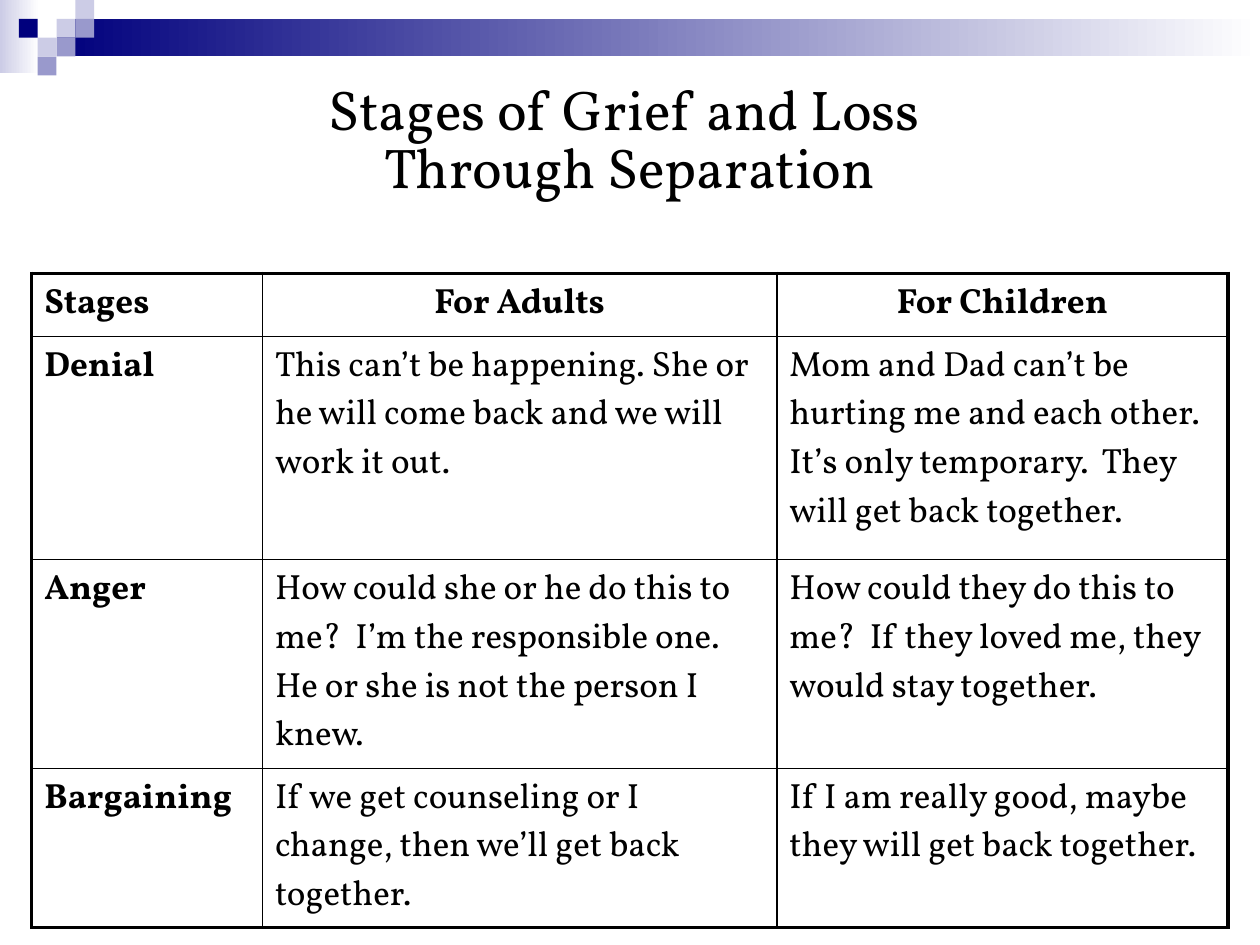
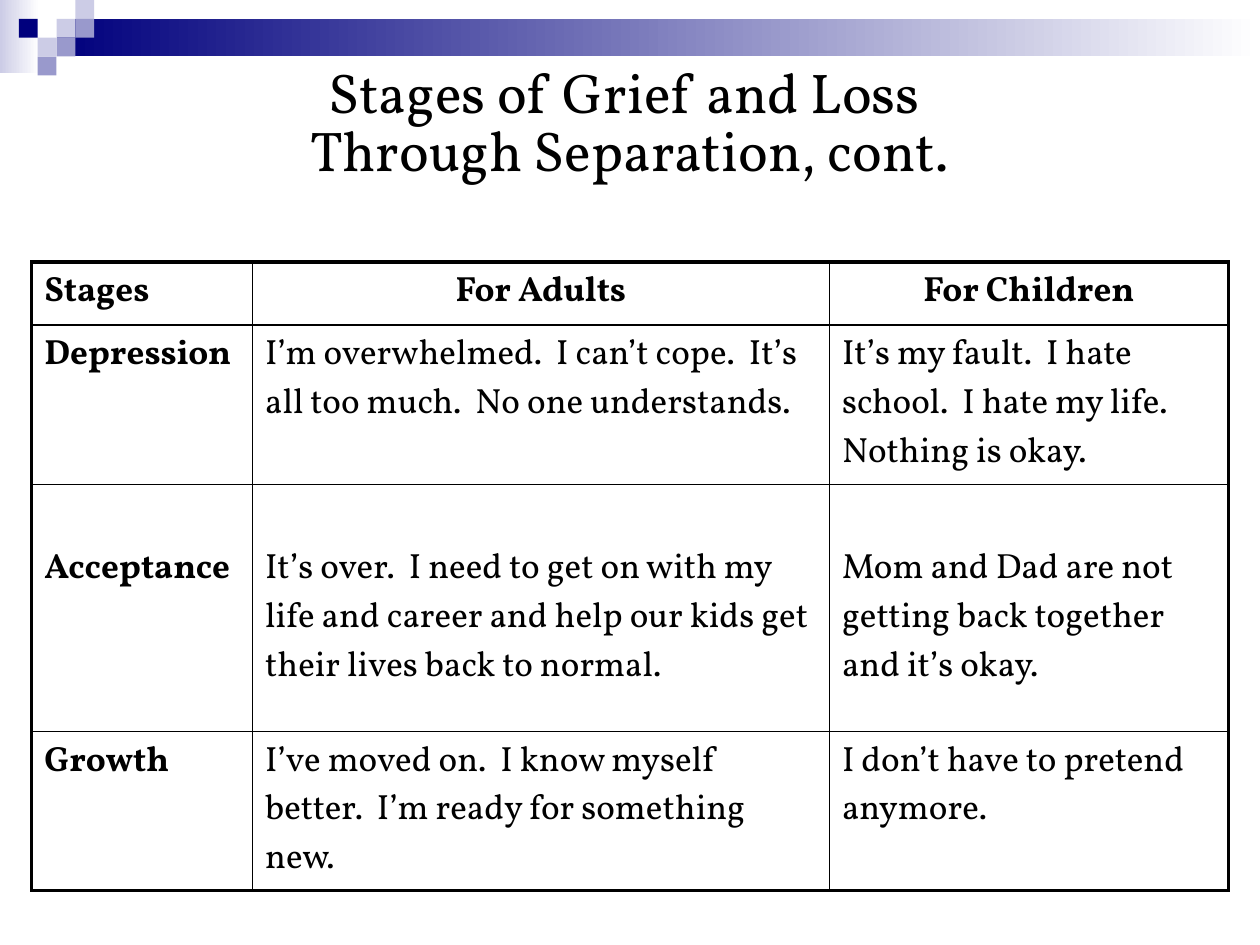
from lxml import etree
from pptx import Presentation
from pptx.dml.color import RGBColor as RGB
from pptx.enum.shapes import MSO_SHAPE as SHAPE
from pptx.enum.text import MSO_ANCHOR as ANCHOR, MSO_AUTO_SIZE as AUTOSIZE, PP_ALIGN as ALIGN
from pptx.oxml.ns import qn
from pptx.util import Cm, Pt

COLORS = {"text": "000000", "navy": "00007D", "mid": "9999CC",
          "pale": "CCCCE6", "white": "FFFFFF"}
FONT = "Vollkorn"
SQUARE = 0.38  # side of the corner squares, in cm
SQUARES = [(3, 1, "pale"), (4, 0, "pale"), (4, 1, "mid"), (2, 2, "pale"),
           (1, 1, "navy"), (3, 2, "mid"), (2, 3, "mid")]  # column, row, colour
HEADER = ["Stages", "For Adults", "For Children"]
THIN, THICK = Pt(1), Pt(2.25)


def color(name):
    return RGB.from_string(COLORS[name])


def write(tf, text, size=20, bold=False, align=ALIGN.LEFT, spacing=None):
    """Fill a text frame with one formatted paragraph; a newline breaks the line."""
    p = tf.paragraphs[0]
    p.alignment, p.line_spacing = align, spacing
    for i, line in enumerate(text.split("\n")):
        if i:
            p.add_line_break()
        r = p.add_run()
        r.text = line
        r.font.name, r.font.size, r.font.bold = FONT, Pt(size), bold
        r.font.color.rgb = color("text")


def set_borders(cell, **widths):
    """Draw cell borders; keys are L, R, T and B in schema order."""
    tc_pr = cell._tc.get_or_add_tcPr()
    for i, (side, width) in enumerate(widths.items()):
        ln = etree.Element(qn(f"a:ln{side}"), w=str(width))
        fill = etree.SubElement(ln, qn("a:solidFill"))
        etree.SubElement(fill, qn("a:srgbClr"), val=COLORS["text"])
        tc_pr.insert(i, ln)


class Deck:
    def __init__(self):
        self.prs = Presentation()
        self.prs.slide_width, self.prs.slide_height = Cm(25.4), Cm(19.05)
        self.s = None

    def add_slide(self):
        self.s = self.prs.slides.add_slide(self.prs.slide_layouts[5])

    def rect(self, x, y, w, h, start, end=None):
        """Add a borderless rectangle, fading to the end colour if one is given."""
        sp = self.s.shapes.add_shape(SHAPE.RECTANGLE, Cm(x), Cm(y), Cm(w), Cm(h))
        sp.shadow.inherit = False
        sp.line.fill.background()
        if end:
            sp.fill.gradient()
            sp.fill.gradient_angle = 0
            for stop, name in zip(sp.fill.gradient_stops, (start, end)):
                stop.color.rgb = color(name)
        else:
            sp.fill.solid()
            sp.fill.fore_color.rgb = color(start)
        return sp

    def master_band(self):
        """Put the gradient band and corner squares on the slide master."""
        band = [self.rect(0, 0, 0.79, 1.47, "pale", "white"),
                self.rect(1.14, 0.38, 24.26, 0.76, "navy", "white")]
        band += [self.rect(col * SQUARE, row * SQUARE, SQUARE, SQUARE, name)
                 for col, row, name in SQUARES]
        tree = self.prs.slide_master.shapes.element
        for i, sp in enumerate(band):
            sp.element.find(".//" + qn("p:cNvPr")).set("id", str(100 + i))
            tree.insert(2 + i, sp.element)

    def title(self, text, top, height):
        sp = self.s.shapes.title
        sp.left, sp.top, sp.width, sp.height = Cm(1.27), Cm(top), Cm(22.86), Cm(height)
        tf = sp.text_frame
        tf.word_wrap, tf.auto_size = True, AUTOSIZE.NONE
        tf.vertical_anchor = ANCHOR.MIDDLE
        write(tf, text, size=32, align=ALIGN.CENTER, spacing=0.86)

    def table(self, stages, top, widths, heights, lowered_row=None):
        """Add the stages table; the text of lowered_row starts one line down."""
        rows = [HEADER] + stages
        frame = self.s.shapes.add_table(len(rows), len(HEADER), Cm(0.64), Cm(top),
                                        Cm(sum(widths)), Cm(sum(heights)))
        tbl = frame.table
        tbl.first_row = tbl.horz_banding = False
        for column, width in zip(tbl.columns, widths):
            column.width = Cm(width)
        for row, height in zip(tbl.rows, heights):
            row.height = Cm(height)
        last_row, last_col = len(rows) - 1, len(HEADER) - 1
        for i, row in enumerate(rows):
            for j, text in enumerate(row):
                cell = tbl.cell(i, j)
                cell.fill.background()
                if i == lowered_row:
                    cell.margin_top = Cm(1.22)
                write(cell.text_frame, text, bold=i == 0 or j == 0,
                      align=ALIGN.CENTER if i == 0 and j else ALIGN.LEFT)
                set_borders(cell,
                            L=THIN if j else THICK,
                            R=THICK if j == last_col else THIN,
                            T=THIN if i else THICK,
                            B=THICK if i == last_row else THIN)


def main():
    deck = Deck()
    deck.add_slide()
    deck.master_band()
    deck.title("Stages of Grief and Loss \nThrough Separation", 1.7, 2.34)
    deck.table([
        ["Denial",
         "This can’t be happening. She or he will come back and we will work it out.",
         "Mom and Dad can’t be hurting me and each other. It’s only temporary.  "
         "They will get back together."],
        ["Anger",
         "How could she or he do this to me?  I’m the responsible one. "
         "He or she is not the person I knew.",
         "How could they do this to me?  If they loved me, they would stay together."],
        ["Bargaining",
         "If we get counseling or I change, then we’ll get back together.",
         "If I am really good, maybe they will get back together."],
    ], 5.51, [4.65, 10.37, 9.1], [1.27, 4.5, 4.21, 2.79])

    deck.add_slide()
    deck.title("Stages of Grief and Loss \nThrough Separation, cont.", 1.47, 2.11)
    deck.table([
        ["Depression",
         "I’m overwhelmed.  I can’t cope.  It’s all too much.  No one understands.",
         "It’s my fault.  I hate school.  I hate my life.  Nothing is okay."],
        ["Acceptance",
         "It’s over.  I need to get on with my life and career and help our kids "
         "get their lives back to normal.",
         "Mom and Dad are not getting back together and it’s okay."],
        ["Growth",
         "I’ve moved on.  I know myself better.  I’m ready for something new.",
         "I don’t have to pretend anymore."],
    ], 5.28, [4.45, 11.63, 8.05], [1.27, 3.2, 4.98, 3.2], lowered_row=2)

    deck.prs.save("out.pptx")


if __name__ == "__main__":
    main()
